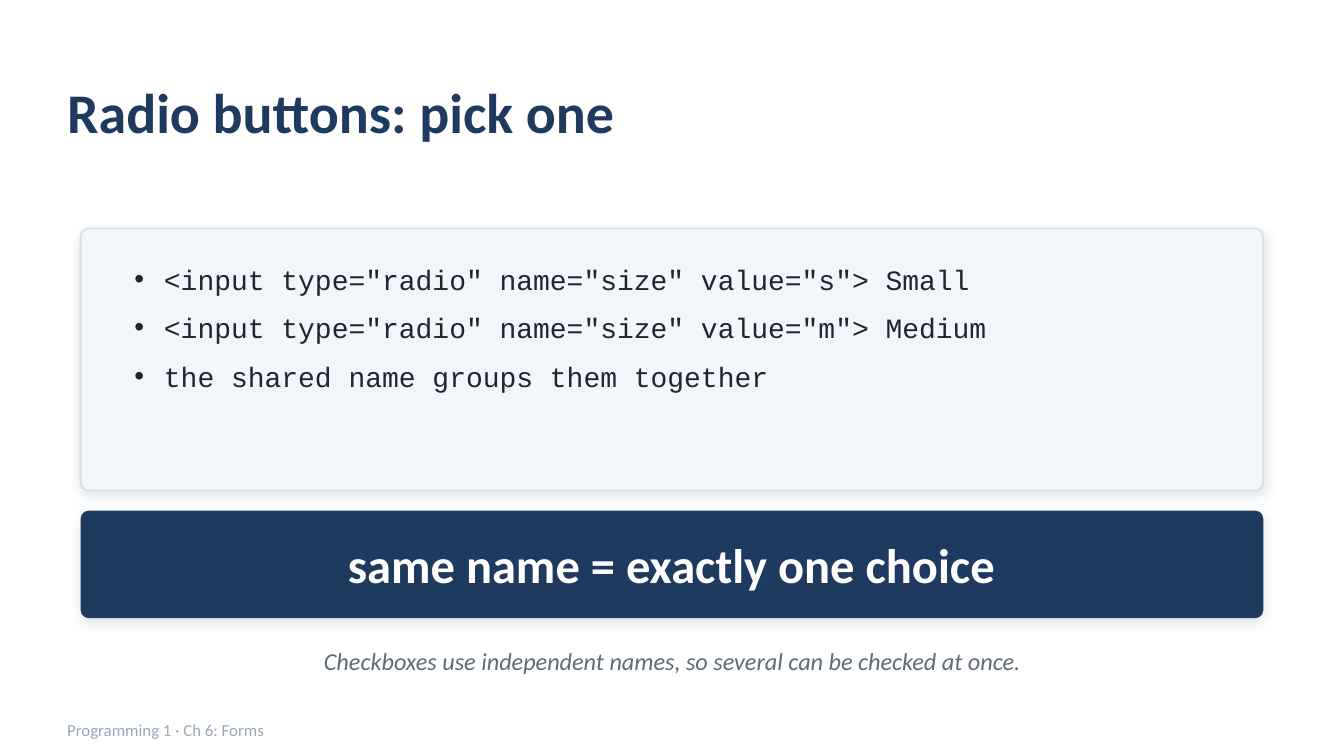
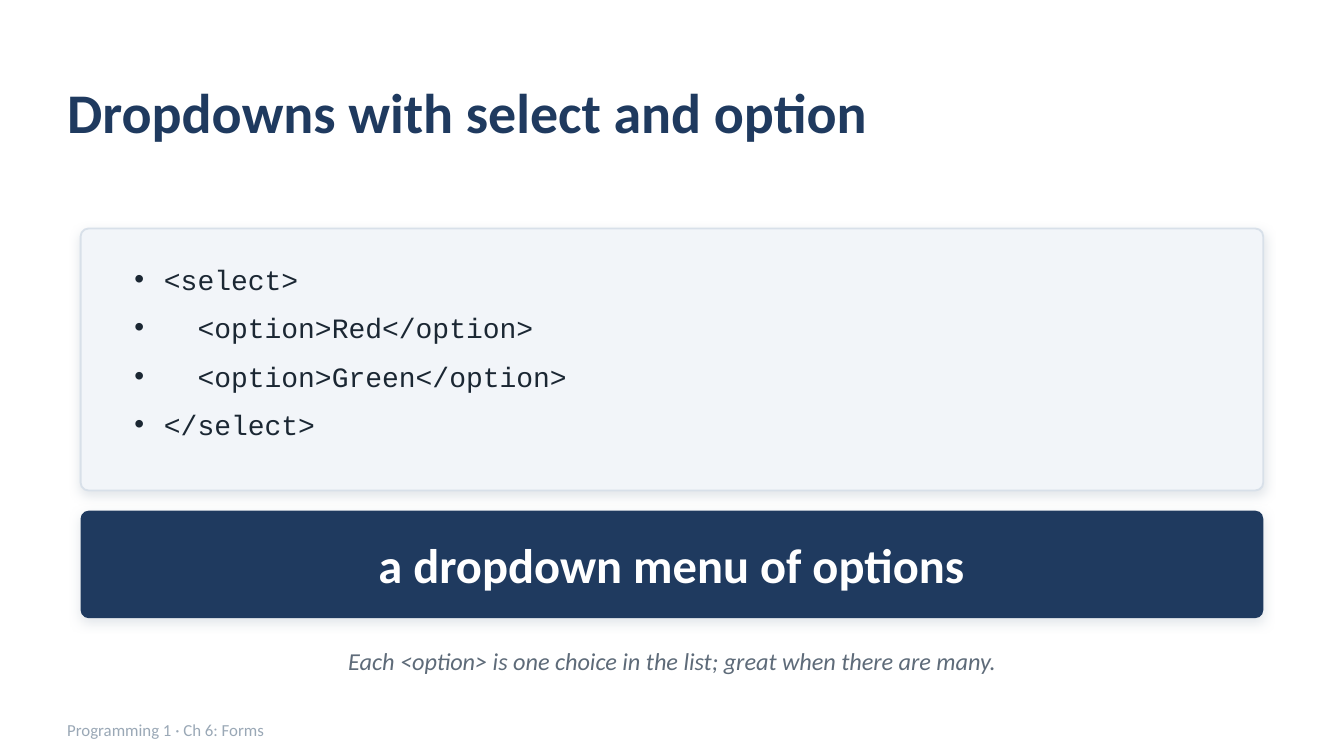
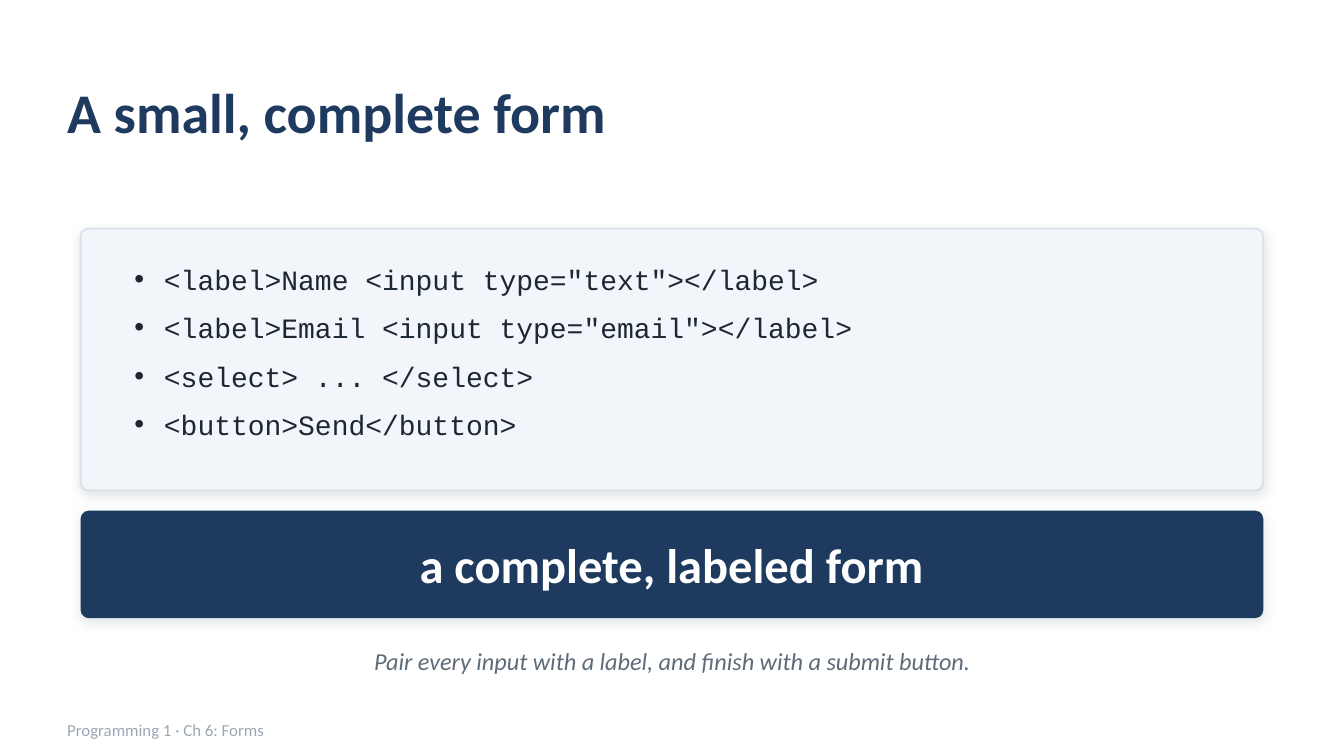
"""Build three slides on HTML form controls, each with code, a takeaway and a note."""
from lxml.etree import SubElement
from pptx import Presentation
from pptx.dml.color import RGBColor
from pptx.enum.shapes import MSO_SHAPE as Shape
from pptx.enum.text import MSO_ANCHOR as Anchor, MSO_AUTO_SIZE as AutoSize, PP_ALIGN as Align
from pptx.oxml.ns import qn
from pptx.util import Inches, Pt

COLORS = {
    "navy": "1F3A5F",
    "card": "F2F5F9",
    "border": "D8E0E9",
    "code": "1B2733",
    "note": "5E6B79",
    "muted": "9AA8B6",
    "white": "FFFFFF",
}
FOOTER = "Programming 1 · Ch 6: Forms"
LESSONS = [
    (
        "Radio buttons: pick one",
        [
            '<input type="radio" name="size" value="s"> Small',
            '<input type="radio" name="size" value="m"> Medium',
            "the shared name groups them together",
        ],
        "same name = exactly one choice",
        "Checkboxes use independent names, so several can be checked at once.",
    ),
    (
        "Dropdowns with select and option",
        ["<select>", "  <option>Red</option>", "  <option>Green</option>", "</select>"],
        "a dropdown menu of options",
        "Each <option> is one choice in the list; great when there are many.",
    ),
    (
        "A small, complete form",
        [
            '<label>Name <input type="text"></label>',
            '<label>Email <input type="email"></label>',
            "<select> ... </select>",
            "<button>Send</button>",
        ],
        "a complete, labeled form",
        "Pair every input with a label, and finish with a submit button.",
    ),
]

presentation = Presentation()
presentation.slide_width = Inches(10)
presentation.slide_height = presentation.slide_width * 9 // 16
COLUMN = presentation.slide_width // 100
ROW = COLUMN
MARGIN, INSET, CODE_LEFT = 5 * COLUMN, 6 * COLUMN, 9 * COLUMN
PANEL_WIDTH = presentation.slide_width - 2 * INSET
RADIUS = 0.6 * ROW


def add_panel(slide, top, height, fill):
    """Add a full-width rounded panel with a soft shadow below it."""
    panel = slide.shapes.add_shape(Shape.ROUNDED_RECTANGLE, INSET, int(top), PANEL_WIDTH, int(height))
    panel.adjustments[0] = RADIUS / height
    panel.fill.solid()
    panel.fill.fore_color.rgb = RGBColor.from_string(COLORS[fill])
    panel.line.fill.background()
    panel.shadow.inherit = False
    effects = panel.element.spPr.find(qn("a:effectLst"))
    shadow = SubElement(effects, qn("a:outerShdw"), blurRad=str(Pt(6)), dist=str(Pt(2)),
                        dir=str(90 * 60000), algn="ctr", rotWithShape="0")
    color = SubElement(shadow, qn("a:srgbClr"), val=COLORS["muted"])
    SubElement(color, qn("a:alpha"), val="28000")
    return panel


def write_line(shape, text, size, color, align=Align.LEFT, bold=False, italic=False):
    """Fill a shape with one vertically centred line of text without insets."""
    frame = shape.text_frame
    frame.text = text
    frame.word_wrap = True
    frame.auto_size = AutoSize.NONE
    frame.vertical_anchor = Anchor.MIDDLE
    frame.margin_left = frame.margin_right = frame.margin_top = frame.margin_bottom = 0
    paragraph = frame.paragraphs[0]
    paragraph.alignment = align
    font = paragraph.runs[0].font
    font.name, font.size, font.bold, font.italic = "Calibri", Pt(size), bold, italic
    font.color.rgb = RGBColor.from_string(COLORS[color])


for heading, code_lines, takeaway, note in LESSONS:
    slide = presentation.slides.add_slide(presentation.slide_layouts[1])
    title, code = slide.placeholders
    title.left, title.top, title.width, title.height = MARGIN, 4 * ROW, 90 * COLUMN, int(8.5 * ROW)
    write_line(title, heading, 30, "navy", bold=True)

    card = add_panel(slide, 17 * ROW, 19.5 * ROW, "card")
    card.line.color.rgb = RGBColor.from_string(COLORS["border"])
    card.line.width = Pt(1)
    code.element.addprevious(card.element)

    code.left, code.top, code.width, code.height = CODE_LEFT, 19 * ROW, 82 * COLUMN, 16 * ROW
    frame = code.text_frame
    frame.text = "\n".join(code_lines)
    frame.word_wrap = True
    frame.auto_size = AutoSize.NONE
    frame.vertical_anchor = Anchor.TOP
    for paragraph in frame.paragraphs:
        properties = paragraph._p.get_or_add_pPr()
        properties.set("marL", str(Inches(0.22)))
        properties.set("indent", str(-Inches(0.22)))
        SubElement(properties, qn("a:buChar"), char="•")
        paragraph.space_before = Pt(0)
        paragraph.space_after = Pt(8)
        font = paragraph.runs[0].font
        font.name, font.size = "Courier New", Pt(15)
        font.color.rgb = RGBColor.from_string(COLORS["code"])

    add_panel(slide, 38 * ROW, 8 * ROW, "navy")
    for text, left, top, width, height, style in [
        (takeaway, INSET, 38.3, PANEL_WIDTH, 7.4,
         {"size": 26, "color": "white", "align": Align.CENTER, "bold": True}),
        (note, INSET, 47.2, PANEL_WIDTH, 4,
         {"size": 13, "color": "note", "align": Align.CENTER, "italic": True}),
        (FOOTER, MARGIN, 53, 80 * COLUMN, 2.6, {"size": 9, "color": "muted"}),
    ]:
        box = slide.shapes.add_textbox(left, int(top * ROW), width, int(height * ROW))
        write_line(box, text, **style)

presentation.save("out.pptx")
